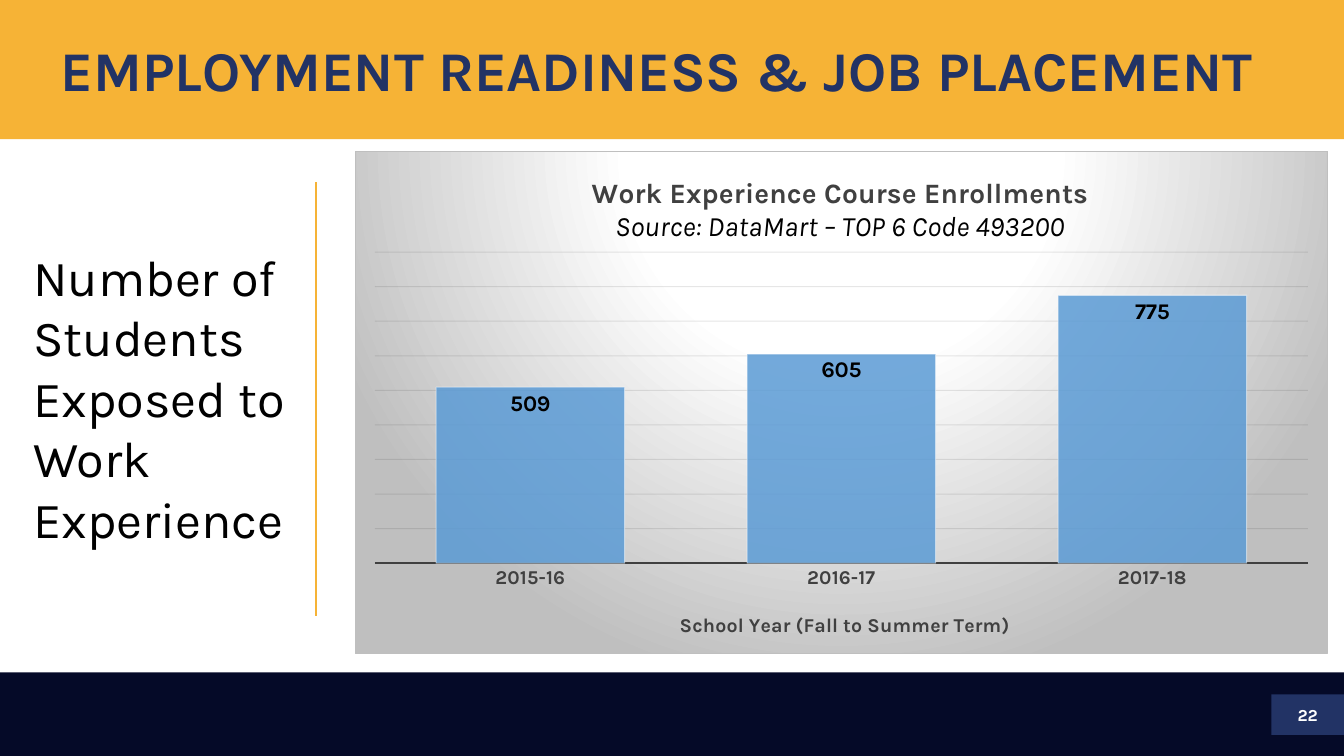
import pptx
import pptx.chart.data
import pptx.dml.color
import pptx.enum.chart
import pptx.enum.shapes
import pptx.enum.text
import pptx.oxml
import pptx.oxml.ns
import pptx.util

Inches = pptx.util.Inches
Pt = pptx.util.Pt
ALIGN = pptx.enum.text.PP_ALIGN
ANCHOR = pptx.enum.text.MSO_ANCHOR
GOLD, NAVY, BLUE, GREY = "F6B336", "050A28", "223365", "404040"


def color(hex_text):
    return pptx.dml.color.RGBColor.from_string(hex_text)


def write_text(frame, text, size, fill="000000", bold=False, italic=False,
               align=None, spacing=None, anchor=None, add=False):
    """Write one paragraph into a frame, or add it below the existing text."""
    paragraph = frame.add_paragraph() if add else frame.paragraphs[0]
    if align is not None:
        paragraph.alignment = align
    if spacing is not None:
        paragraph.line_spacing = spacing
    if anchor is not None:
        frame.vertical_anchor = anchor
    run = paragraph.add_run()
    run.text = text
    run.font.name = "Karla"
    run.font.size = Pt(size)
    run.font.bold = bold
    run.font.italic = italic
    run.font.color.rgb = color(fill)


presentation = pptx.Presentation()
presentation.slide_width = Inches(13.33)
presentation.slide_height = Inches(7.5)
slide = presentation.slides.add_slide(presentation.slide_layouts[5])

# Bands and page number
for left, top, width, height, fill in [
    (0, 0, 13.33, 1.38, GOLD),
    (0, 6.67, 13.33, 0.83, NAVY),
    (12.61, 6.89, 0.72, 0.4, BLUE),
]:
    band = slide.shapes.add_shape(
        pptx.enum.shapes.MSO_SHAPE.RECTANGLE,
        Inches(left), Inches(top), Inches(width), Inches(height))
    band.shadow.inherit = False
    band.fill.solid()
    band.fill.fore_color.rgb = color(fill)
    band.line.fill.background()
page_box = band
write_text(page_box.text_frame, "22", 12, fill="FFFFFF", bold=True,
           align=ALIGN.CENTER, anchor=ANCHOR.MIDDLE)

# Title, brought in front of the gold band
title = slide.shapes.title
title.left, title.top = Inches(0.5), Inches(0)
title.width, title.height = Inches(12.29), Inches(1.45)
write_text(title.text_frame, "EMPLOYMENT READINESS & JOB PLACEMENT", 40,
           fill=BLUE, bold=True, align=ALIGN.LEFT, spacing=0.9, anchor=ANCHOR.MIDDLE)
title.element.getparent().append(title.element)

# Message and divider
divider = slide.shapes.add_connector(
    pptx.enum.shapes.MSO_CONNECTOR.STRAIGHT,
    Inches(3.13), Inches(1.81), Inches(3.13), Inches(6.11))
divider.line.color.rgb = color(GOLD)
divider.line.width = Pt(1.5)
divider.element.spPr.append(pptx.oxml.parse_xml(
    f"<a:effectLst {pptx.oxml.ns.nsdecls('a')}/>"))

message = slide.shapes.add_textbox(
    Inches(0.23), Inches(2.39), Inches(2.75), Inches(3.13)).text_frame
message.word_wrap = True
write_text(message, "Number of Students Exposed to Work Experience", 36)

# Enrollment chart
chart_data = pptx.chart.data.CategoryChartData()
chart_data.categories = ["2015-16", "2016-17", "2017-18"]
chart_data.add_series("Series 1", [509, 605, 775])
chart = slide.shapes.add_chart(
    pptx.enum.chart.XL_CHART_TYPE.COLUMN_CLUSTERED,
    Inches(3.52), Inches(1.5), Inches(9.65), Inches(4.99), chart_data).chart
chart.has_legend = False
chart.font.name = "Calibri"
chart.font.size = Pt(10)
chart.font.color.rgb = color("000000")

chart.has_title = True
heading = chart.chart_title.text_frame
write_text(heading, "Work Experience Course Enrollments", 20, fill=GREY,
           bold=True, align=ALIGN.CENTER)
write_text(heading, "Source: DataMart – TOP 6 Code 493200", 20, italic=True,
           align=ALIGN.CENTER, add=True)

years = chart.category_axis
years.has_title = True
write_text(years.axis_title.text_frame, "School Year (Fall to Summer Term)", 14,
           fill=GREY, bold=True)
years.major_tick_mark = pptx.enum.chart.XL_TICK_MARK.NONE
years.format.line.color.rgb = color(GREY)
years.format.line.width = Pt(1.5)

enrollments = chart.value_axis
enrollments.visible = False
enrollments.minimum_scale, enrollments.maximum_scale = 0, 900
enrollments.major_unit = 100
enrollments.has_major_gridlines = True
gridline = enrollments.major_gridlines.format.line
gridline.color.rgb = color("0D0D0D")
gridline.width = Pt(0.75)

plot = chart.plots[0]
plot.gap_width = 65
plot.vary_by_categories = False
columns = plot.series[0].format
columns.fill.solid()
columns.fill.fore_color.rgb = color("5B9BD5")
columns.line.color.rgb = color("FFFFFF")
columns.line.width = Pt(0.75)

plot.has_data_labels = True
labels = plot.data_labels
labels.show_value = True
labels.position = pptx.enum.chart.XL_LABEL_POSITION.INSIDE_END
for font, size, fill in [(labels.font, 16, "000000"), (years.tick_labels.font, 14, GREY)]:
    font.name = "Karla"
    font.size = Pt(size)
    font.bold = True
    font.color.rgb = color(fill)

# Transparency, in thousandths of a percent of opacity
for place, opacity in [
    ("c:ser/c:spPr/a:solidFill", 85000),
    ("c:ser/c:spPr/a:ln/a:solidFill", 50000),
    ("c:majorGridlines/c:spPr/a:ln/a:solidFill", 10000),
]:
    for tint in chart.element.xpath(f".//{place}/a:srgbClr"):
        tint.append(pptx.oxml.parse_xml(
            f'<a:alpha {pptx.oxml.ns.nsdecls("a")} val="{opacity}"/>'))

# Places of the chart parts, as shares of the chart's size
for place, index, shares in [
    ("c:plotArea", 0, {"x": 0.02, "y": 0.2, "w": 0.96, "h": 0.62}),
    ("c:chart/c:title", 1, {"x": 0.24, "y": 0.04}),
    ("c:catAx/c:title", 1, {"x": 0.33, "y": 0.91}),
]:
    part = chart.element.xpath(f".//{place}")[0]
    for automatic in part.xpath("./c:layout"):
        part.remove(automatic)
    target = '<c:layoutTarget val="inner"/>' if "w" in shares else ""
    modes = "".join(f'<c:{side}Mode val="edge"/>' for side in "xy")
    values = "".join(f'<c:{side} val="{share}"/>' for side, share in shares.items())
    part.insert(index, pptx.oxml.parse_xml(
        f'<c:layout {pptx.oxml.ns.nsdecls("c")}><c:manualLayout>'
        f"{target}{modes}{values}</c:manualLayout></c:layout>"))

# Radial background and border of the chart
stops = "".join(
    f'<a:gs pos="{share * 1000}"><a:srgbClr val="{fill}"/></a:gs>'
    for share, fill in [(0, "FFFFFF"), (39, "FFFFFF"), (100, "BFBFBF")])
chart.element.xpath("./c:chart")[0].addnext(pptx.oxml.parse_xml(
    f'<c:spPr {pptx.oxml.ns.nsdecls("c", "a")}><a:gradFill><a:gsLst>{stops}</a:gsLst>'
    '<a:path path="circle"><a:fillToRect l="50000" t="-80000" r="50000" b="180000"/>'
    '</a:path></a:gradFill><a:ln w="9525"><a:solidFill><a:srgbClr val="BFBFBF"/>'
    "</a:solidFill></a:ln></c:spPr>"))

presentation.save("out.pptx")
